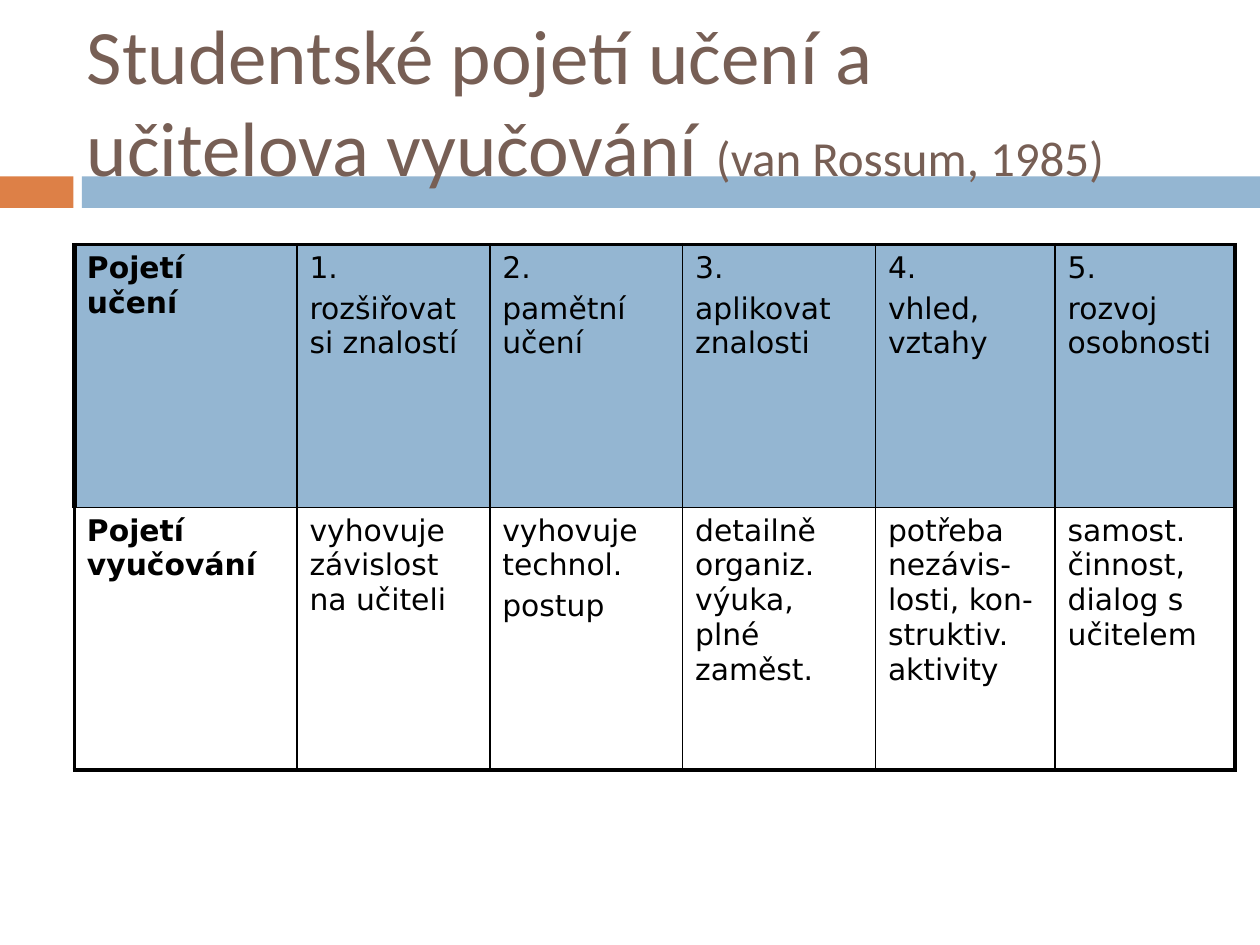
"""Builds the slide on student conceptions of learning and of teaching."""
from lxml.etree import SubElement
from pptx import Presentation
from pptx.dml.color import RGBColor
from pptx.enum.shapes import MSO_SHAPE
from pptx.enum.text import MSO_ANCHOR
from pptx.oxml.ns import qn
from pptx.util import Pt

ORANGE = RGBColor(0xDD, 0x80, 0x47)
BLUE = RGBColor(0x94, 0xB6, 0xD2)
BROWN = RGBColor(0x77, 0x5F, 0x55)
BLACK = RGBColor(0, 0, 0)
WHITE = RGBColor(0xFF, 0xFF, 0xFF)

COL_WIDTHS = [127.2, 110.2, 110.2, 110.2, 102.7, 102.7]
ROW_HEIGHT = 150.2
THIN, THICK, CORNER = 1, 2.25, 3
ROWS = [
    ["Pojetí učení", "1.\nrozšiřovat si znalostí", "2.\npamětní učení",
     "3.\naplikovat znalosti", "4.\nvhled, vztahy", "5.\nrozvoj osobnosti"],
    ["Pojetí vyučování", "vyhovuje závislost na učiteli",
     "vyhovuje technol.\npostup", "detailně organiz. výuka, plné zaměst.",
     "potřeba nezávis-losti, kon-struktiv. aktivity",
     "samost. činnost, dialog s učitelem"],
]


def add_bar(slide, left, width, color):
    sp = slide.shapes.add_shape(MSO_SHAPE.RECTANGLE, Pt(left), Pt(100.8),
                                Pt(width), Pt(18))
    sp.shadow.inherit = False
    sp.fill.solid()
    sp.fill.fore_color.rgb = color
    sp.line.fill.background()


def add_title(slide, title, citation):
    tf = slide.shapes.add_textbox(Pt(42.5), Pt(0), Pt(624.2), Pt(113.8)).text_frame
    tf.word_wrap = True
    tf.vertical_anchor = MSO_ANCHOR.MIDDLE
    p = tf.paragraphs[0]
    p.font.name = "Calibri"
    p.font.color.rgb = BROWN
    for text, size in ((title, 44), (citation, 28)):
        r = p.add_run()
        r.text = text
        r.font.size = Pt(size)


def set_borders(cell, widths):
    tcPr = cell._tc.get_or_add_tcPr()
    for tag, width in zip(("a:lnL", "a:lnR", "a:lnT", "a:lnB"), widths):
        ln = SubElement(tcPr, qn(tag), w=str(Pt(width)))
        fill = SubElement(ln, qn("a:solidFill"))
        SubElement(fill, qn("a:srgbClr"), val=str(BLACK))


def fill_cell(cell, text, color, bold):
    cell.fill.solid()
    cell.fill.fore_color.rgb = color
    tf = cell.text_frame
    tf.text = text
    for i, p in enumerate(tf.paragraphs):
        if i:
            p.space_before = Pt(3.4)
        p.font.name = "DejaVu Sans"
        p.font.size = Pt(17)
        p.font.bold = bold
        p.font.color.rgb = BLACK


def add_comparison(slide, left, top):
    n_rows, n_cols = len(ROWS), len(COL_WIDTHS)
    table = slide.shapes.add_table(n_rows, n_cols, Pt(left), Pt(top),
                                   Pt(sum(COL_WIDTHS)),
                                   Pt(ROW_HEIGHT * n_rows)).table
    table.first_row = table.horz_banding = False
    for col, width in zip(table.columns, COL_WIDTHS):
        col.width = Pt(width)
    for i, texts in enumerate(ROWS):
        table.rows[i].height = Pt(ROW_HEIGHT)
        for j, text in enumerate(texts):
            cell = table.cell(i, j)
            outer = CORNER if i == 0 else THICK
            set_borders(cell, (outer if j == 0 else THIN,
                               THICK if j == n_cols - 1 else THIN,
                               THICK if i == 0 else THIN,
                               THICK if i == n_rows - 1 else THIN))
            fill_cell(cell, text, BLUE if i == 0 else WHITE, j == 0)


def main():
    prs = Presentation()
    prs.slide_width, prs.slide_height = Pt(720), Pt(540)
    slide = prs.slides.add_slide(prs.slide_layouts[6])
    add_bar(slide, 0, 42, ORANGE)
    add_bar(slide, 46.8, 673.2, BLUE)
    add_title(slide, "Studentské pojetí učení a učitelova vyučování ",
              "(van Rossum, 1985)")
    add_comparison(slide, 42.5, 139.7)
    prs.save("out.pptx")


if __name__ == "__main__":
    main()
